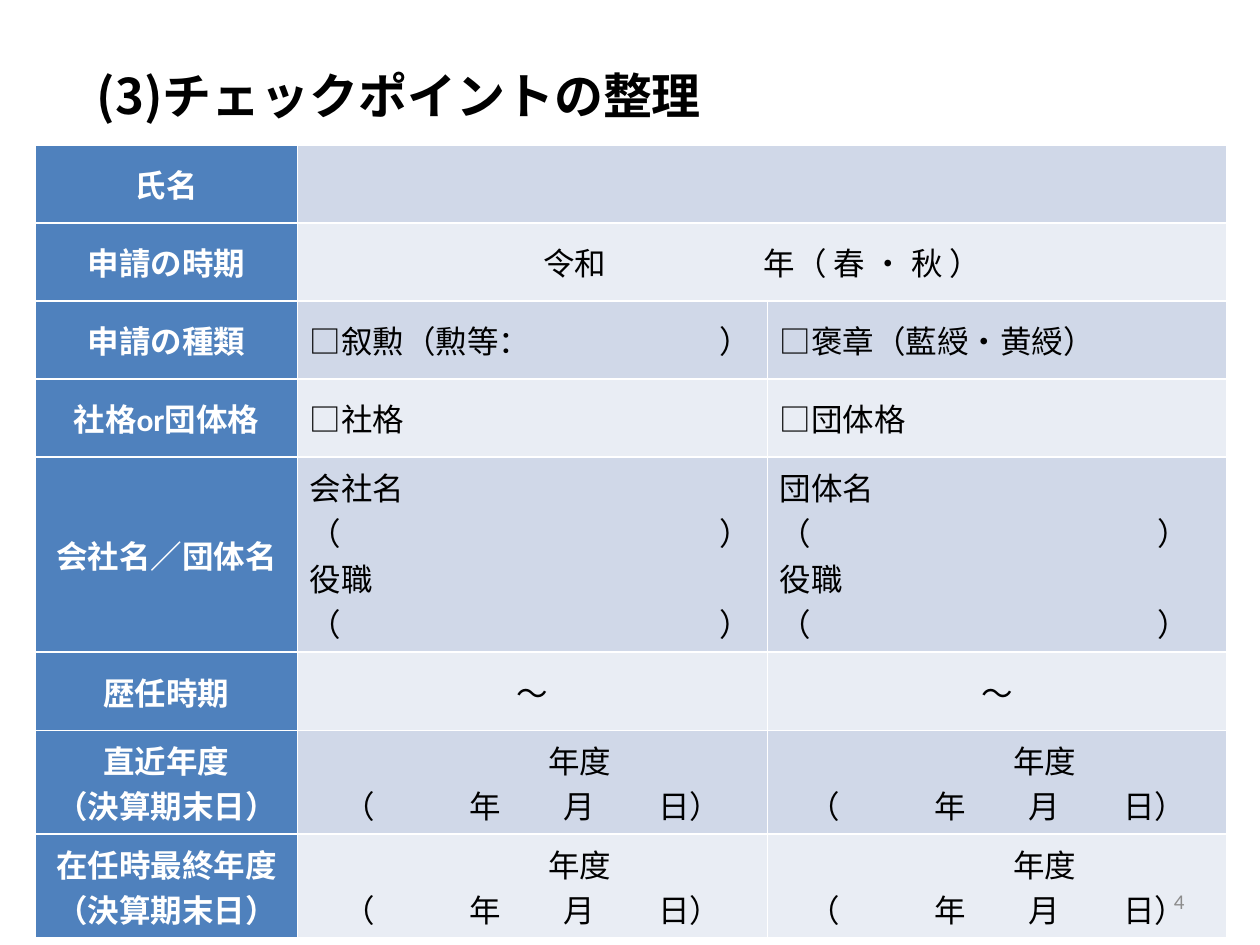
from lxml.etree import SubElement
from pptx import Presentation
from pptx.dml.color import RGBColor
from pptx.enum.text import MSO_ANCHOR as Anchor, MSO_AUTO_SIZE as AutoSize, PP_ALIGN as Align
from pptx.oxml.ns import qn
from pptx.util import Inches, Pt

LATIN, JAPANESE = "Calibri", "Noto Sans CJK JP"
WHITE, BLACK, GRAY = "FFFFFF", "000000", "8C8C8C"
HEADER_FILL = "4F81BD"
BAND_FILLS = ["D0D8E8", "E9EDF4"]

COLUMN_WIDTHS = [2.08, 3.73, 3.65]
ROW_HEIGHTS = [0.62] * 4 + [1.2, 0.62, 0.64, 0.64]

# Full-width space: the room left to write in on the form
BLANK = "　"
YEAR_END = [BLANK * 3 + "年度", f"（{BLANK * 3}年{BLANK * 2}月{BLANK * 2}日）"]
COMPANY_ROOM = f"（{BLANK * 12}）"
GROUP_ROOM = f"（{BLANK * 11}）"

# Header lines, answer cells (one cell spans both columns), answer alignment
ROWS = [
    (["氏名"], [[]], Align.CENTER),
    (["申請の時期"], [[f"令和{BLANK * 5}年（ 春 ・ 秋 ）"]], Align.CENTER),
    (["申請の種類"], [[f"□叙勲（勲等：{BLANK * 6}）"], ["□褒章（藍綬・黄綬）"]], Align.LEFT),
    (["社格or団体格"], [["□社格"], ["□団体格"]], Align.LEFT),
    (["会社名／団体名"],
     [["会社名", COMPANY_ROOM, f"役職{BLANK * 2}{COMPANY_ROOM}"],
      ["団体名" + GROUP_ROOM, "役職" + GROUP_ROOM]], Align.LEFT),
    (["歴任時期"], [["～"], ["～"]], Align.CENTER),
    (["直近年度", "（決算期末日）"], [YEAR_END, YEAR_END], Align.CENTER),
    (["在任時最終年度", "（決算期末日）"], [YEAR_END, YEAR_END], Align.CENTER),
]


def color(value):
    return RGBColor.from_string(value)


def write_lines(text_frame, lines, size, font, text_color, bold=False, align=Align.LEFT):
    for index, line in enumerate(lines):
        paragraph = text_frame.add_paragraph() if index else text_frame.paragraphs[0]
        paragraph.alignment = align
        run = paragraph.add_run()
        run.text = line
        run.font.size = Pt(size)
        run.font.name = font
        run.font.bold = bold
        run.font.color.rgb = color(text_color)
        east_asian = SubElement(run.font._element, qn("a:ea"))
        east_asian.set("typeface", JAPANESE)


def add_text(slide, left, top, width, height, text, **style):
    text_box = slide.shapes.add_textbox(Inches(left), Inches(top), Inches(width), Inches(height))
    text_box.text_frame.word_wrap = True
    write_lines(text_box.text_frame, [text], **style)
    return text_box.text_frame


def set_borders(cell):
    properties = cell._tc.get_or_add_tcPr()
    for position, side in enumerate(["lnL", "lnR", "lnT", "lnB"]):
        line = properties.makeelement(qn(f"a:{side}"), {"w": str(Pt(1))})
        fill = SubElement(line, qn("a:solidFill"))
        SubElement(fill, qn("a:srgbClr")).set("val", WHITE)
        properties.insert(position, line)


def fill_cell(cell, lines, fill, **style):
    cell.fill.solid()
    cell.fill.fore_color.rgb = color(fill)
    cell.vertical_anchor = Anchor.MIDDLE
    write_lines(cell.text_frame, lines, 18, **style)


def add_form(slide):
    frame = slide.shapes.add_table(
        len(ROWS), len(COLUMN_WIDTHS), Inches(0.28), Inches(1.15),
        Inches(sum(COLUMN_WIDTHS)), Inches(sum(ROW_HEIGHTS)))
    table = frame.table
    for column, width in zip(table.columns, COLUMN_WIDTHS):
        column.width = Inches(width)
    for row, height in zip(table.rows, ROW_HEIGHTS):
        row.height = Inches(height)

    for index, (header, answers, align) in enumerate(ROWS):
        if len(answers) == 1:
            table.cell(index, 1).merge(table.cell(index, 2))
        fill_cell(table.cell(index, 0), header, HEADER_FILL, font=LATIN,
                  text_color=WHITE, bold=True, align=Align.CENTER)
        for column, lines in enumerate(answers, start=1):
            fill_cell(table.cell(index, column), lines, BAND_FILLS[index % 2],
                      font=JAPANESE, text_color=BLACK, align=align)
    for cell in table.iter_cells():
        set_borders(cell)


def main():
    presentation = Presentation()
    presentation.slide_width = Inches(10)
    presentation.slide_height = Inches(7.5)
    slide = presentation.slides.add_slide(presentation.slide_layouts[6])

    # Form table
    add_form(slide)

    # Page number
    page_number = add_text(slide, 7.17, 6.95, 2.33, 0.4, "4", size=12, font=LATIN,
                           text_color=GRAY, align=Align.RIGHT)
    page_number.vertical_anchor = Anchor.MIDDLE

    # Title
    title = add_text(slide, 0.67, 0.47, 9.15, 0.57, "(3)チェックポイントの整理",
                     size=28, font=JAPANESE, text_color=BLACK, bold=True)
    title.auto_size = AutoSize.SHAPE_TO_FIT_TEXT

    presentation.save("out.pptx")


if __name__ == "__main__":
    main()
